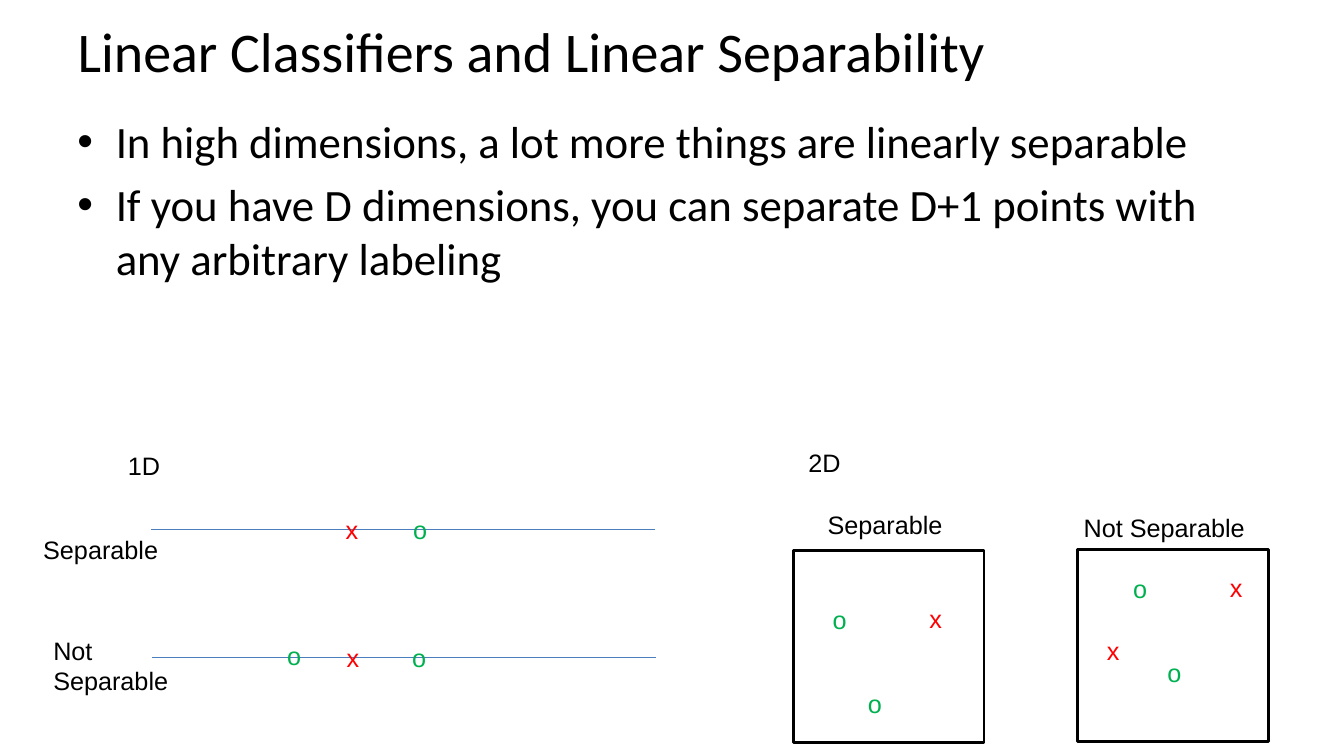
from lxml import etree
from pptx import Presentation, util as u
from pptx.dml.color import RGBColor
from pptx.enum import shapes, text
from pptx.oxml import ns

COLORS = {"ink": "000000", "x": "FF0000", "o": "00B050", "axis": "4B7EBC"}
MARK_WIDTH = {"x": 0.33, "o": 0.34}
LABEL_HEIGHT = 0.4


def rgb(name):
    """Return the named colour."""
    return RGBColor.from_string(COLORS[name])


def format_text(tf, font, size, color="ink"):
    """Give every run the same font, size and colour."""
    for p in tf.paragraphs:
        for r in p.runs:
            r.font.name = font
            r.font.size = u.Pt(size)
            r.font.color.rgb = rgb(color)


def add_label(parent, words, x, y, w, h=LABEL_HEIGHT, color="ink", wrap=False):
    """Add a small text box to a slide or a group."""
    tf = parent.shapes.add_textbox(*map(u.Inches, (x, y, w, h))).text_frame
    tf.text = words
    tf.word_wrap = wrap
    tf.auto_size = text.MSO_AUTO_SIZE.SHAPE_TO_FIT_TEXT
    format_text(tf, "Arial", 18, color)


def add_marks(parent, x, y, marks):
    """Add class marks at offsets from the given corner."""
    for mark, dx, dy in marks:
        add_label(parent, mark, x + dx, y + dy, MARK_WIDTH[mark], color=mark)


def add_title(s, words, x, y, w, h):
    """Move, fill and format the title placeholder."""
    sp = s.shapes.title
    sp.left, sp.top, sp.width, sp.height = map(u.Inches, (x, y, w, h))
    tf = sp.text_frame
    tf.text = words
    tf.auto_size = text.MSO_AUTO_SIZE.NONE
    tf.vertical_anchor = text.MSO_ANCHOR.MIDDLE
    tf.paragraphs[0].alignment = text.PP_ALIGN.LEFT
    format_text(tf, "Calibri", 40)


def add_bullets(s, items, x, y, w, h):
    """Add a bulleted list with hanging indents."""
    tf = s.shapes.add_textbox(*map(u.Inches, (x, y, w, h))).text_frame
    tf.word_wrap = True
    tf.text = "\n".join(items)
    format_text(tf, "Calibri", 32)
    indent = u.Inches(0.38)
    for p in tf.paragraphs:
        p.space_before = u.Pt(6.4)
        pPr = p._p.get_or_add_pPr()
        pPr.set("marL", str(indent))
        pPr.set("indent", str(-indent))
        etree.SubElement(pPr, ns.qn("a:buFont")).set("typeface", "Arial")
        etree.SubElement(pPr, ns.qn("a:buChar")).set("char", "•")


def add_number_line(s, x, y, w, marks):
    """Draw a one-dimensional axis with its marks."""
    ends = map(u.Inches, (x, y, x + w, y))
    line = s.shapes.add_connector(shapes.MSO_CONNECTOR.STRAIGHT, *ends)
    line.line.color.rgb = rgb("axis")
    line.line.width = u.Pt(0.75)
    etree.SubElement(line._element.spPr, ns.qn("a:effectLst"))
    add_marks(s, x, y - LABEL_HEIGHT / 2, marks)


def add_plane(s, x, y, w, h, marks):
    """Draw a framed two-dimensional plot as one group."""
    group = s.shapes.add_group_shape()
    add_marks(group, x, y, marks)
    frame = group.shapes.add_shape(
        shapes.MSO_SHAPE.RECTANGLE, *map(u.Inches, (x, y, w, h)))
    frame.shadow.inherit = False
    frame.fill.background()
    frame.line.color.rgb = rgb("ink")
    frame.line.width = u.Pt(2)


def add_1d_region(s, x, y):
    """Place the one-dimensional examples."""
    add_label(s, "1D", x + 0.84, y, 0.52)
    add_number_line(s, x + 1.17, y + 0.83, 5, [("x", 1.83, 0), ("o", 2.5, 0)])
    add_number_line(s, x + 1.18, y + 2.1, 5,
                    [("x", 1.83, 0), ("o", 1.24, -0.02), ("o", 2.48, 0)])
    add_label(s, "Separable", x, y + 0.83, 1.35)
    add_label(s, "Not Separable", x + 0.1, y + 1.83, 1.35, 0.71, wrap=True)


def add_2d_region(s, x, y):
    """Place the two-dimensional examples."""
    add_label(s, "2D", x + 0.05, y, 0.52)
    add_plane(s, x, y + 1.07, 1.89, 1.91,
              [("x", 1.25, 0.48), ("o", 0.29, 0.49), ("o", 0.64, 1.32)])
    add_plane(s, x + 2.82, y + 1.06, 1.89, 1.91,
              [("x", 1.41, 0.18), ("o", 0.45, 0.19),
               ("o", 0.79, 1.02), ("x", 0.19, 0.8)])
    add_label(s, "Separable", x + 0.24, y + 0.61, 1.35)
    add_label(s, "Not Separable", x + 2.78, y + 0.64, 1.94, wrap=True)


def main():
    """Build the slide and save it."""
    prs = Presentation()
    prs.slide_width, prs.slide_height = u.Inches(13.33), u.Inches(7.5)
    s = prs.slides.add_slide(prs.slide_layouts.get_by_name("Title Only"))
    add_title(s, "Linear Classifiers and Linear Separability", 0.67, 0, 12, 1)
    add_bullets(s, [
        "In high dimensions, a lot more things are linearly separable",
        "If you have D dimensions, you can separate D+1 points with "
        "any arbitrary labeling",
    ], 0.67, 1.08, 12, 5.62)
    add_1d_region(s, 0.33, 4.42)
    add_2d_region(s, 7.87, 4.39)
    prs.save("out.pptx")


if __name__ == "__main__":
    main()
